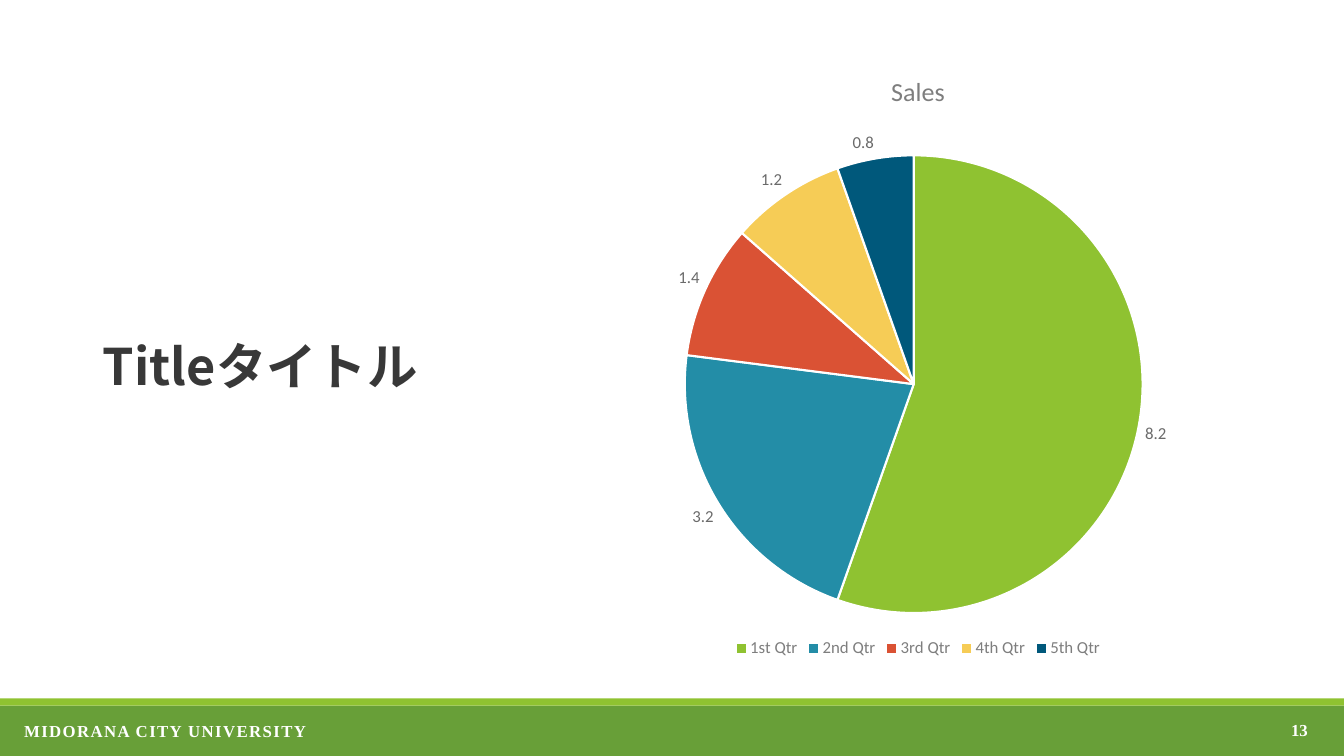
from lxml.etree import SubElement
from pptx import Presentation
from pptx.chart.data import CategoryChartData
from pptx.dml.color import RGBColor
from pptx.enum.chart import XL_CHART_TYPE as ChartType
from pptx.enum.chart import XL_LABEL_POSITION as LabelPosition
from pptx.enum.chart import XL_LEGEND_POSITION as LegendPosition
from pptx.enum.shapes import MSO_SHAPE as Preset
from pptx.enum.text import MSO_ANCHOR as Anchor
from pptx.enum.text import PP_ALIGN as Align
from pptx.oxml.ns import qn
from pptx.util import Inches, Pt

WHITE = RGBColor(0xFF, 0xFF, 0xFF)
DARK = RGBColor(0x38, 0x38, 0x38)
GRAY = RGBColor(0x7E, 0x7E, 0x7E)
LABEL_GRAY = RGBColor(0x6A, 0x6A, 0x6A)
DEEP_GREEN = RGBColor(0x68, 0x9F, 0x38)
GREEN = RGBColor(0x8F, 0xC2, 0x31)
BLUE = RGBColor(0x23, 0x8D, 0xA7)
RED = RGBColor(0xDA, 0x52, 0x34)
YELLOW = RGBColor(0xF6, 0xCC, 0x56)
NAVY = RGBColor(0x00, 0x58, 0x7B)

SALES = {
    "1st Qtr": (8.2, GREEN),
    "2nd Qtr": (3.2, BLUE),
    "3rd Qtr": (1.4, RED),
    "4th Qtr": (1.2, YELLOW),
    "5th Qtr": (0.8, NAVY),
}
TITLE_FORMAT = {"name": "Noto Sans CJK JP", "size": Pt(36), "bold": True}
FOOTER_FORMAT = {"name": "Times New Roman", "size": Pt(12), "bold": True}


def format_font(font, color, values):
    """Apply a dict of format values and a colour to a font."""
    for name, value in values.items():
        setattr(font, name, value)
    font.color.rgb = color


def chart_format(size):
    """Return the font values of chart text at a size in points."""
    return {"name": "Calibri", "size": Pt(size), "bold": False}


def add_band(slide, top, height, color):
    """Add a full-width footer band."""
    band = slide.shapes.add_shape(
        Preset.RECTANGLE, 0, Inches(top), Inches(13.33), Inches(height))
    band.shadow.inherit = False
    band.fill.solid()
    band.fill.fore_color.rgb = color
    band.line.fill.background()


def add_footer_text(slide, text, box, align, anchor, spacing=0):
    """Add white footer text with letter spacing in points."""
    frame = slide.shapes.add_textbox(*map(Inches, box)).text_frame
    frame.word_wrap = True
    frame.vertical_anchor = anchor
    paragraph = frame.paragraphs[0]
    paragraph.alignment = align
    run = paragraph.add_run()
    run.text = text
    format_font(run.font, WHITE, FOOTER_FORMAT)
    run._r.get_or_add_rPr().set("spc", str(spacing * 100))


def fill_title(slide, text):
    """Place and format the slide title."""
    title = slide.shapes.title
    title.left, title.top, title.width, title.height = map(
        Inches, (0.92, 2.94, 4.1, 1.45))
    title.text_frame.vertical_anchor = Anchor.MIDDLE
    paragraph = title.text_frame.paragraphs[0]
    paragraph.alignment = Align.LEFT
    paragraph.line_spacing = 0.9
    run = paragraph.add_run()
    run.text = text
    format_font(run.font, DARK, TITLE_FORMAT)
    SubElement(run._r.get_or_add_rPr(), qn("a:ea"),
               typeface=TITLE_FORMAT["name"])


def add_sales_pie(slide):
    """Add the pie chart of quarterly sales."""
    data = CategoryChartData()
    data.categories = list(SALES)
    data.add_series("Sales", [value for value, _ in SALES.values()])
    box = map(Inches, (5.57, 0.51, 7.07, 6.06))
    chart = slide.shapes.add_chart(ChartType.PIE, *box, data).chart
    format_font(chart.font, DARK, chart_format(10))

    chart.has_title = True
    run = chart.chart_title.text_frame.paragraphs[0].add_run()
    run.text = "Sales"
    format_font(run.font, GRAY, chart_format(18.6))
    chart.chart_title.include_in_layout = False

    chart.has_legend = True
    chart.legend.position = LegendPosition.BOTTOM
    chart.legend.include_in_layout = False
    format_font(chart.legend.font, GRAY, chart_format(12))

    plot = chart.plots[0]
    plot.vary_by_categories = True
    series = plot.series[0]
    labels = series.data_labels
    labels.show_value = True
    labels.position = LabelPosition.OUTSIDE_END
    format_font(labels.font, LABEL_GRAY, chart_format(12))
    for index, (_, color) in enumerate(SALES.values()):
        point = series.points[index].format
        point.fill.solid()
        point.fill.fore_color.rgb = color
        point.line.color.rgb = WHITE
        point.line.width = Pt(1.5)


def main():
    """Build the slide and save it."""
    presentation = Presentation()
    presentation.slide_width = Inches(13.33)
    presentation.slide_height = Inches(7.5)
    slide = presentation.slides.add_slide(presentation.slide_layouts[5])
    add_band(slide, 7, 0.5, DEEP_GREEN)
    add_band(slide, 6.93, 0.07, GREEN)
    add_footer_text(slide, "MIDORANA CITY UNIVERSITY",
                    (0.14, 7.1, 12.48, 0.3), Align.LEFT, Anchor.TOP, 1)
    add_footer_text(slide, "13", (10.07, 7.04, 3, 0.4),
                    Align.RIGHT, Anchor.MIDDLE)
    add_sales_pie(slide)
    fill_title(slide, "Titleタイトル")
    presentation.save("out.pptx")


if __name__ == "__main__":
    main()
